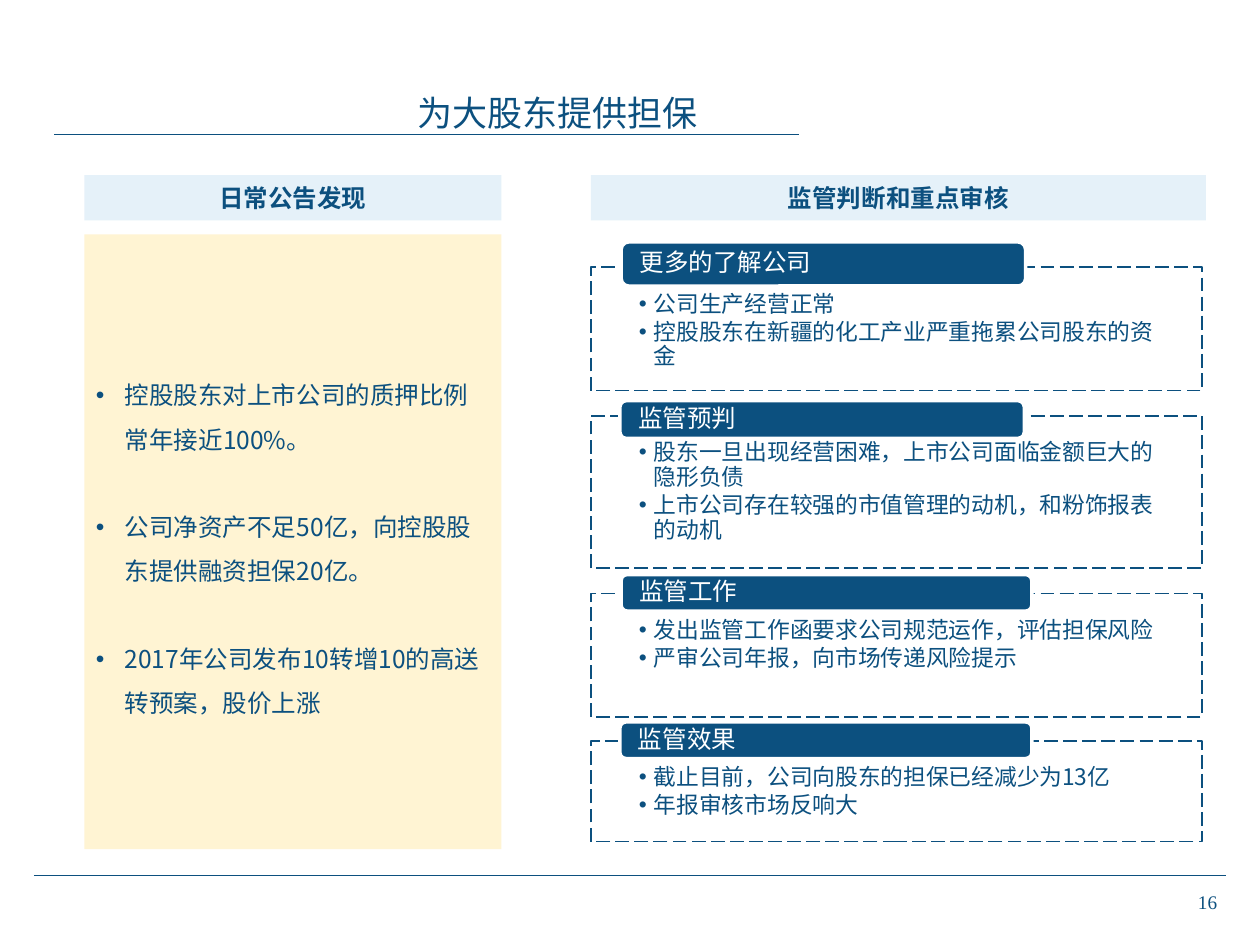
from lxml.etree import SubElement
from pptx import Presentation
from pptx.dml.color import RGBColor
from pptx.enum.dml import MSO_LINE
from pptx.enum.shapes import MSO_CONNECTOR, MSO_SHAPE
from pptx.enum.text import MSO_ANCHOR, PP_ALIGN
from pptx.oxml.ns import qn
from pptx.util import Inches, Pt

NAVY, WHITE, PALE_BLUE, CREAM = "0C507F", "FFFFFF", "E5F1F9", "FFF4D3"
SANS = "Noto Sans CJK SC"
LEFT_COLUMN, RIGHT_COLUMN = 0.67, 4.69
LEFT_WIDTH, RIGHT_WIDTH, FRAME_WIDTH = 3.31, 4.88, 4.85

deck = Presentation()
deck.slide_width, deck.slide_height = Inches(10), Inches(7.5)
slide = deck.slides.add_slide(deck.slide_layouts[6])


def add_panel(bounds, fill, preset=MSO_SHAPE.RECTANGLE, border=None, weight=1):
    """Add a flat filled shape; bounds are left, top, width, height in inches."""
    panel = slide.shapes.add_shape(preset, *map(Inches, bounds))
    panel.shadow.inherit = False
    panel.fill.solid()
    panel.fill.fore_color.rgb = RGBColor.from_string(fill)
    if border:
        panel.line.color.rgb = RGBColor.from_string(border)
        panel.line.width = Pt(weight)
    else:
        panel.line.fill.background()
    return panel


def write(shape, lines, size, color=NAVY, font=SANS, bold=False, align=PP_ALIGN.LEFT,
          anchor=MSO_ANCHOR.MIDDLE, insets=(0.09, 0.04, 0.09, 0.04),
          spacing=1, gap=0, bullet_indent=0):
    """Fill a shape with paragraphs; insets are left, top, right, bottom in inches."""
    frame = shape.text_frame
    frame.word_wrap = True
    frame.vertical_anchor = anchor
    (frame.margin_left, frame.margin_top,
     frame.margin_right, frame.margin_bottom) = map(Inches, insets)
    frame.text = "\n".join(lines)
    for index, paragraph in enumerate(frame.paragraphs):
        paragraph.alignment = align
        paragraph.line_spacing = spacing
        if index:
            paragraph.space_before = Pt(gap)
        if bullet_indent:
            properties = paragraph._p.get_or_add_pPr()
            properties.set("marL", str(Inches(bullet_indent)))
            properties.set("indent", str(-Inches(bullet_indent)))
            SubElement(properties, qn("a:buFont"), typeface="Arial")
            SubElement(properties, qn("a:buChar"), char="•")
        for run in paragraph.runs:
            run.font.size = Pt(size)
            run.font.bold = bold
            run.font.color.rgb = RGBColor.from_string(color)
            run.font.name = font
            SubElement(run._r.get_or_add_rPr(), qn("a:ea"), typeface=font)


# Footer and title rules
for start, end, height in [(0.27, 9.73, 6.95), (0.43, 6.34, 1.07)]:
    rule = slide.shapes.add_connector(
        MSO_CONNECTOR.STRAIGHT, *map(Inches, (start, height, end, height)))
    rule.line.color.rgb = RGBColor.from_string(NAVY)
    rule.line.width = Pt(0.5)
    SubElement(rule._element.spPr, qn("a:effectLst"))

title = slide.shapes.add_textbox(*map(Inches, (3.03, 0.68, 4.49, 0.44)))
write(title, ["为大股东提供担保"], 20, anchor=MSO_ANCHOR.TOP, insets=(0.28, 0.05, 0.1, 0.05))

# Review steps: heading, tab (left, top, width, height), frame top and height, points
steps = [
    ("更多的了解公司", (4.93, 1.92, 3.21, 0.35), 2.12, 0.98,
     ["公司生产经营正常", "控股股东在新疆的化工产业严重拖累公司股东的资金"]),
    ("监管预判", (4.92, 3.18, 3.21, 0.3), 3.3, 1.21,
     ["股东一旦出现经营困难，上市公司面临金额巨大的隐形负债",
      "上市公司存在较强的市值管理的动机，和粉饰报表的动机"]),
    ("监管工作", (4.93, 4.56, 3.26, 0.29), 4.71, 0.98,
     ["发出监管工作函要求公司规范运作，评估担保风险", "严审公司年报，向市场传递风险提示"]),
    ("监管效果", (4.92, 5.73, 3.27, 0.29), 5.88, 0.8,
     ["截止目前，公司向股东的担保已经减少为13亿", "年报审核市场反响大"]),
]
for heading, tab_bounds, top, height, points in steps:
    step = add_panel((RIGHT_COLUMN, top, FRAME_WIDTH, height), WHITE, border=NAVY)
    step.line.dash_style = MSO_LINE.LONG_DASH
    write(step, points, 13, anchor=MSO_ANCHOR.TOP, insets=(0.38, 0.2, 0.38, 0.1),
          spacing=0.9, gap=2, bullet_indent=0.12)
    tab = add_panel(tab_bounds, NAVY, MSO_SHAPE.ROUNDED_RECTANGLE, WHITE, 2)
    write(tab, [heading], 14, WHITE, insets=(0.13, 0, 0.13, 0), spacing=0.9)

# Column headings
for heading, left, width in [("日常公告发现", LEFT_COLUMN, LEFT_WIDTH),
                             ("监管判断和重点审核", RIGHT_COLUMN, RIGHT_WIDTH)]:
    banner = add_panel((left, 1.39, width, 0.36), PALE_BLUE)
    write(banner, [heading], 14, bold=True, align=PP_ALIGN.CENTER)

findings = add_panel((LEFT_COLUMN, 1.86, LEFT_WIDTH, 4.88), CREAM)
write(findings, ["控股股东对上市公司的质押比例常年接近100%。",
                 "公司净资产不足50亿，向控股股东提供融资担保20亿。",
                 "2017年公司发布10转增10的高送转预案，股价上涨"],
      14, spacing=1.5, gap=25, bullet_indent=0.23)

page_number = slide.shapes.add_textbox(*map(Inches, (9.41, 7.02, 0.47, 0.29)))
write(page_number, ["16"], 11, font="Times New Roman", anchor=MSO_ANCHOR.TOP,
      insets=(0.1, 0.05, 0.1, 0.05))

deck.save("out.pptx")
